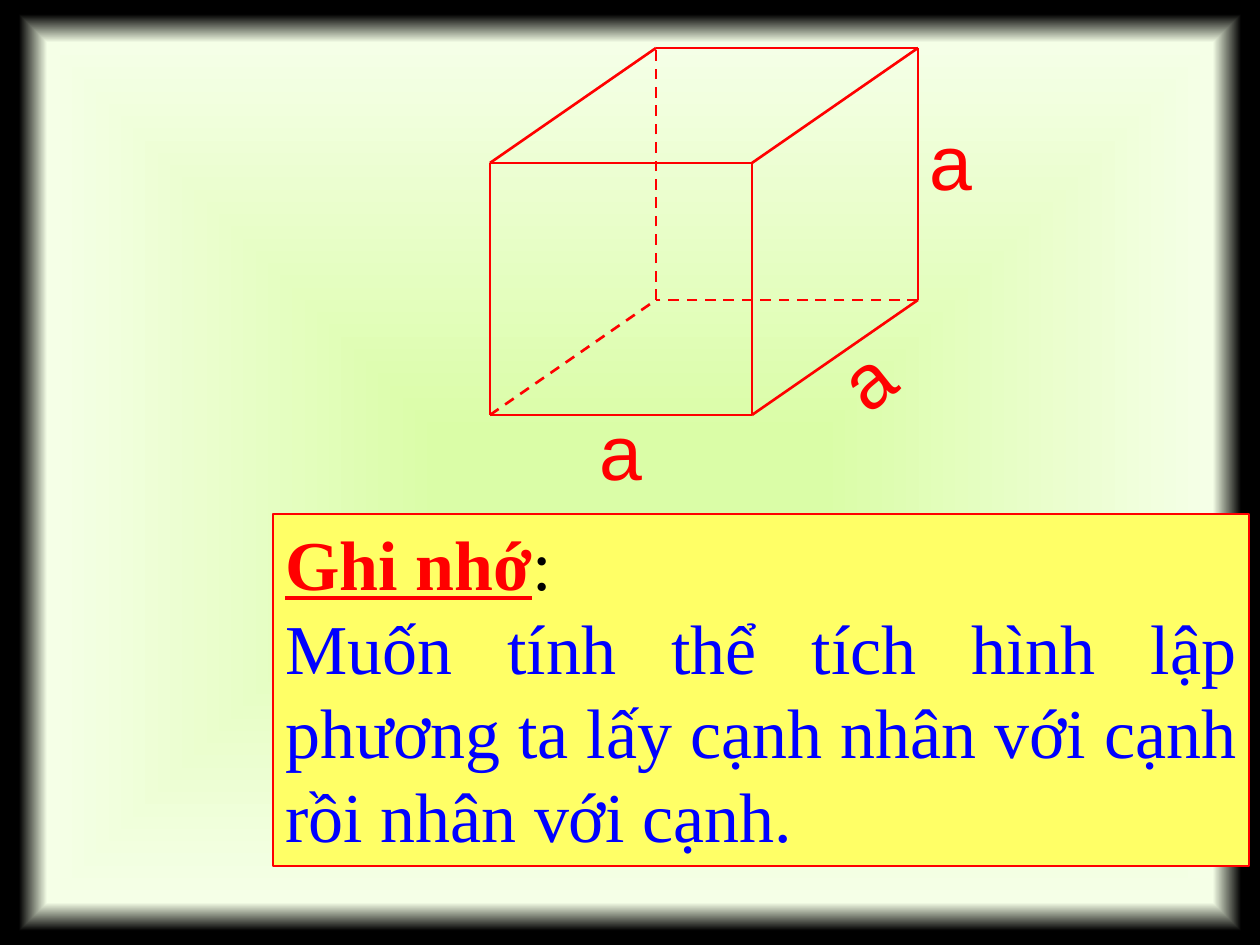
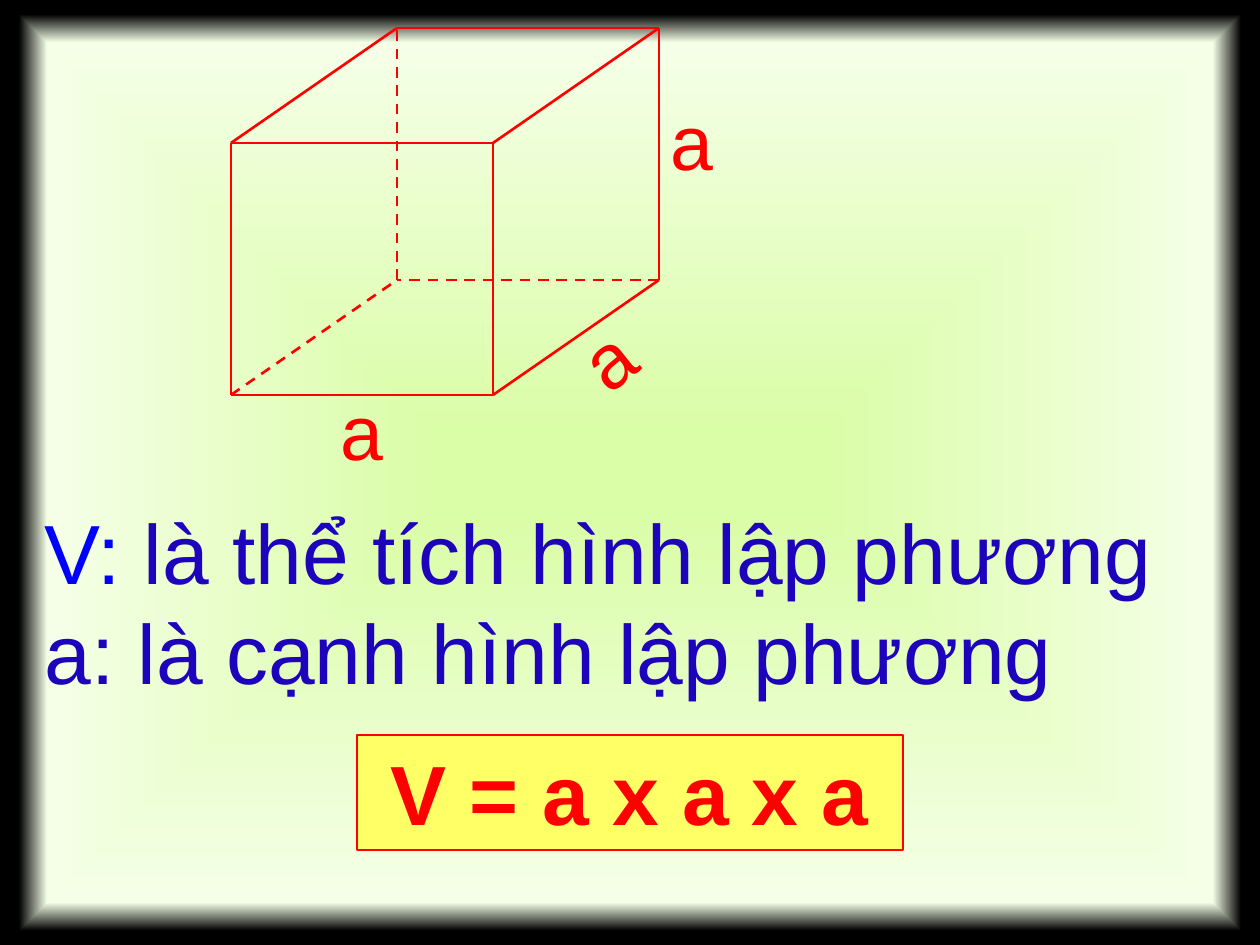
import lxml.etree
import pptx
import pptx.dml.color
import pptx.enum.dml
import pptx.enum.shapes
import pptx.enum.text
import pptx.oxml
import pptx.oxml.ns
import pptx.util

COLOURS = {"red": "FF0000", "blue": "0000FF", "indigo": "1E03BD", "black": "000000",
           "yellow": "FFFF66", "lime": "DAFDA7", "mint": "F5FFE7"}
RGB = {name: pptx.dml.color.RGBColor.from_string(code) for name, code in COLOURS.items()}
PX = 914400 / 126  # EMU in one px
ALIGN = pptx.enum.text.PP_ALIGN


def emu(*lengths):
    return [pptx.util.Emu(round(length * PX)) for length in lengths]


def add_text(shapes, place, paragraphs, font, size, align=ALIGN.LEFT, bold=None, framed=False):
    """Add a text box, or a framed yellow panel; paragraphs are lists of (text, colour)."""
    if framed:
        box = shapes.add_shape(pptx.enum.shapes.MSO_SHAPE.RECTANGLE, *emu(*place))
        box.shadow.inherit = False
        box.fill.solid()
        box.fill.fore_color.rgb = RGB["yellow"]
        box.line.color.rgb = RGB["red"]
        box.line.width = pptx.util.Pt(0.75)
    else:
        box = shapes.add_textbox(*emu(*place))
    frame = box.text_frame
    frame.word_wrap = True
    frame.auto_size = pptx.enum.text.MSO_AUTO_SIZE.SHAPE_TO_FIT_TEXT
    frame.vertical_anchor = pptx.enum.text.MSO_ANCHOR.TOP
    for index, spans in enumerate(paragraphs):
        paragraph = frame.paragraphs[0] if index == 0 else frame.add_paragraph()
        paragraph.alignment = align
        paragraph.font.name = font
        paragraph.font.size = pptx.util.Pt(size)
        paragraph.font.bold = bold
        for text, colour in spans:
            span = paragraph.add_run()
            span.text = text
            span.font.name = font
            span.font.size = pptx.util.Pt(size)
            span.font.color.rgb = RGB[colour]
    return box


deck = pptx.Presentation()
deck.slide_width, deck.slide_height = emu(1260, 945)

# Shared background: lime centre, mint surround, black edge
master = deck.slide_master
master.background.fill.solid()
background = master.element.find(".//" + pptx.oxml.ns.qn("p:bgPr"))
background.replace(background[0], pptx.oxml.parse_xml(f"""
<a:gradFill {pptx.oxml.ns.nsdecls("a")} rotWithShape="1">
  <a:gsLst>
    <a:gs pos="8000"><a:srgbClr val="{COLOURS['lime']}"/></a:gs>
    <a:gs pos="91000"><a:srgbClr val="{COLOURS['mint']}"/></a:gs>
    <a:gs pos="97000"><a:srgbClr val="{COLOURS['black']}"><a:alpha val="0"/></a:srgbClr></a:gs>
  </a:gsLst>
  <a:path path="shape"><a:fillToRect l="50000" t="50000" r="50000" b="50000"/></a:path>
</a:gradFill>"""))

# Cube corners, measured from the top left corner of the front face
WIDTH, HEIGHT, DEPTH_X, DEPTH_Y = 262, 252, 166, -115
front = [(0, 0), (WIDTH, 0), (WIDTH, HEIGHT), (0, HEIGHT)]
back = [(x + DEPTH_X, y + DEPTH_Y) for x, y in front]
edges = []
for corner in range(4):
    following = (corner + 1) % 4
    edges += [(front[corner], front[following]), (back[corner], back[following]),
              (front[corner], back[corner])]
hidden_corner = back[3]
edge_labels = [(337, 148, 321.4), (427, -56, 0), (97, 234, 0)]

pages = []
for left, top in [(490, 163), (231, 143)]:
    page = deck.slides.add_slide(deck.slide_layouts[6])
    pages.append(page)
    cube = page.shapes.add_group_shape()
    for start, end in edges:
        edge = cube.shapes.add_connector(
            pptx.enum.shapes.MSO_CONNECTOR.STRAIGHT,
            *emu(left + start[0], top + start[1], left + end[0], top + end[1]))
        edge.line.color.rgb = RGB["red"]
        edge.line.width = pptx.util.Pt(1.5)
        if hidden_corner in (start, end):
            edge.line.dash_style = pptx.enum.dml.MSO_LINE.DASH
        lxml.etree.SubElement(edge.element.spPr, pptx.oxml.ns.qn("a:effectLst"))
    for x, y, angle in edge_labels:
        label = add_text(cube.shapes, (left + x, top + y, 116, 105), [[("a", "red")]], "Arial", 44)
        label.rotation = angle

rule_page, formula_page = pages

# Slide 1: the rule to remember
rule = add_text(
    rule_page.shapes, (273, 514, 976, 352),
    [[("Ghi nhớ", "red"), (":", "black")],
     [("Muốn tính thể tích hình lập phương ta lấy cạnh nhân với cạnh rồi nhân với cạnh.", "blue")]],
    "Times New Roman", 40, ALIGN.JUSTIFY, framed=True)
heading = rule.text_frame.paragraphs[0].runs[0]
heading.font.bold = True
heading.font.underline = True

# Slide 2: the symbols and the formula
add_text(formula_page.shapes, (32, 494, 1229, 214),
         [[("V:", "blue"), (" là thể tích hình lập phương", "indigo")],
          [("a: là cạnh hình lập phương", "indigo")]],
         "Arial", 48)
add_text(formula_page.shapes, (357, 735, 546, 115), [[("V = a x a x a", "red")]],
         "Arial", 48, ALIGN.CENTER, bold=True, framed=True)

deck.save("out.pptx")
